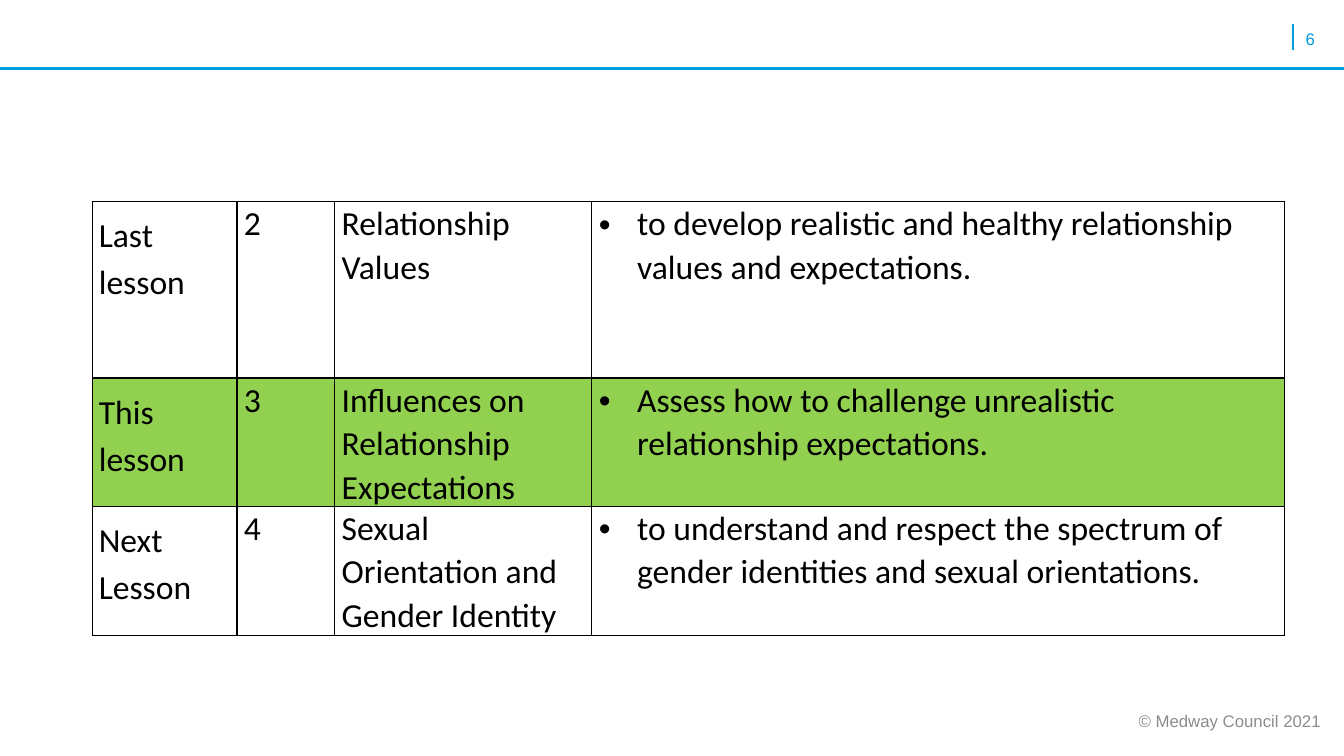
"""Build the lesson overview slide with its table of last, current and next lesson."""
from lxml import etree
from pptx import Presentation
from pptx.dml.color import RGBColor
from pptx.enum.shapes import MSO_CONNECTOR
from pptx.enum.text import MSO_ANCHOR, PP_ALIGN
from pptx.oxml.ns import qn
from pptx.util import Inches, Pt

STRAIGHT = MSO_CONNECTOR.STRAIGHT
TOP, MIDDLE = MSO_ANCHOR.TOP, MSO_ANCHOR.MIDDLE
LEFT, RIGHT = PP_ALIGN.LEFT, PP_ALIGN.RIGHT

BLUE, GREY, BLACK, WHITE, GREEN = "009DDC", "8C8C8C", "000000", "FFFFFF", "92D050"
COLUMN_WIDTHS = [1.43, 0.97, 2.55, 6.87]
LESSONS = [
    (1.75, WHITE, ["Last lesson", "2", "Relationship Values",
                   "to develop realistic and healthy relationship values and expectations."]),
    (1.24, GREEN, ["This lesson", "3", "Influences on Relationship Expectations",
                   "Assess how to challenge unrealistic relationship expectations."]),
    (1.28, WHITE, ["Next Lesson", "4", "Sexual Orientation and Gender Identity",
                   "to understand and respect the spectrum of gender identities and sexual orientations."]),
]


def color(value):
    return RGBColor.from_string(value)


class LessonSlide:
    def __init__(self, slide):
        self.slide = slide
        self.label_font = "Arial"
        self.table_font = "Calibri"

    def style_text(self, paragraph, font_name, size, font_color):
        for run in paragraph.runs:
            run.font.name = font_name
            run.font.size = Pt(size)
            run.font.color.rgb = color(font_color)

    def line(self, start, end, width):
        points = [Inches(value) for value in (*start, *end)]
        connector = self.slide.shapes.add_connector(STRAIGHT, *points)
        connector.line.color.rgb = color(BLUE)
        connector.line.width = Pt(width)
        etree.SubElement(connector._element.spPr, qn("a:effectLst"))

    def label(self, text, box, font_color, align=LEFT, anchor=TOP):
        shape = self.slide.shapes.add_textbox(*[Inches(value) for value in box])
        text_frame = shape.text_frame
        text_frame.word_wrap = True
        text_frame.vertical_anchor = anchor
        text_frame.text = text
        paragraph = text_frame.paragraphs[0]
        paragraph.alignment = align
        self.style_text(paragraph, self.label_font, 12, font_color)

    def border(self, cell):
        properties = cell._tc.get_or_add_tcPr()
        for index, side in enumerate(("a:lnL", "a:lnR", "a:lnT", "a:lnB")):
            edge = etree.Element(qn(side), w=str(Pt(1)))
            fill = etree.SubElement(edge, qn("a:solidFill"))
            etree.SubElement(fill, qn("a:srgbClr"), val=BLACK)
            properties.insert(index, edge)

    def bullet(self, paragraph):
        properties = paragraph._p.get_or_add_pPr()
        properties.set("marL", str(Inches(0.38)))
        properties.set("indent", str(-Inches(0.38)))
        etree.SubElement(properties, qn("a:buFont"), typeface="Arial")
        etree.SubElement(properties, qn("a:buChar"), char="•")

    def cell(self, cell, text, fill, column):
        is_heading = column == 0
        side, edge = (0.06, 0.08) if is_heading else (0.07, 0)
        cell.margin_left = cell.margin_right = Inches(side)
        cell.margin_top = cell.margin_bottom = Inches(edge)
        cell.fill.solid()
        cell.fill.fore_color.rgb = color(fill)
        self.border(cell)
        cell.text_frame.text = text
        paragraph = cell.text_frame.paragraphs[0]
        paragraph.line_spacing = 1.15 if is_heading else 1.06
        if column == len(COLUMN_WIDTHS) - 1:
            self.bullet(paragraph)
        self.style_text(paragraph, self.table_font, 24, BLACK)

    def table(self, left, top, widths, lessons):
        height = sum(lesson[0] for lesson in lessons)
        frame = self.slide.shapes.add_table(
            len(lessons), len(widths), Inches(left), Inches(top), Inches(sum(widths)), Inches(height))
        table = frame.table
        table.first_row = table.horz_banding = False
        for column, width in zip(table.columns, widths):
            column.width = Inches(width)
        for row, (row_height, fill, texts) in zip(table.rows, lessons):
            row.height = Inches(row_height)
            for column, (cell, text) in enumerate(zip(row.cells, texts)):
                self.cell(cell, text, fill, column)


def main():
    presentation = Presentation()
    presentation.slide_width = Inches(13.33)
    presentation.slide_height = Inches(7.5)
    page = LessonSlide(presentation.slides.add_slide(presentation.slide_layouts[6]))
    page.line((12.82, 0.24), (12.82, 0.5), 1.5)
    page.line((0, 0.68), (13.33, 0.68), 2.25)
    page.label("6", (12.85, 0.24, 0.42, 0.26), BLUE)
    page.label("© Medway Council 2021", (10.86, 6.95, 2.34, 0.4), GREY, RIGHT, MIDDLE)
    page.table(0.92, 2, COLUMN_WIDTHS, LESSONS)
    presentation.save("out.pptx")


if __name__ == "__main__":
    main()
